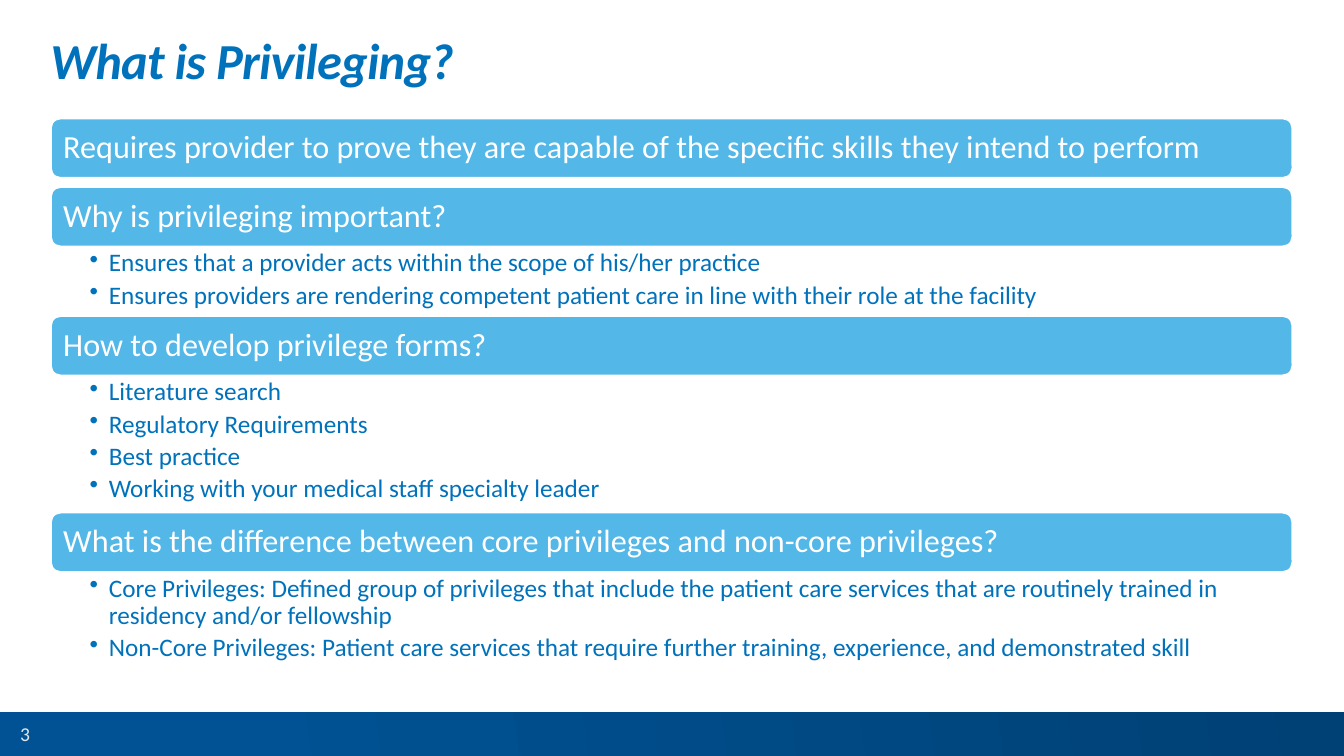
from lxml import etree
from pptx import Presentation, util as u
from pptx.dml.color import RGBColor
from pptx.enum import shapes, text
from pptx.oxml.ns import qn

COLORS = {
    "heading": "53B7E8",
    "blue": "0072BC",
    "footer start": "005294",
    "footer end": "004175",
    "white": "FFFFFF",
    "page number": "E6E7E8",
}

# Vertical measures are percentages of the slide height.
HEADING_HEIGHT = 8
STACK_TOP = 15.6
GAP = 1.07

# Heading, its bullets, and the height that the bullets take.
SECTIONS = [
    ("Requires provider to prove they are capable of the specific skills they intend to perform",
     [], GAP),
    ("Why is privileging important?",
     ["Ensures that a provider acts within the scope of his/her practice",
      "Ensures providers are rendering competent patient care in line with their role at the facility"],
     9.07),
    ("How to develop privilege forms?",
     ["Literature search",
      "Regulatory Requirements",
      "Best practice",
      "Working with your medical staff specialty leader"],
     18),
    ("What is the difference between core privileges and non-core privileges?",
     ["Core Privileges: Defined group of privileges that include the patient care services "
      "that are routinely trained in residency and/or fellowship",
      "Non-Core Privileges: Patient care services that require further training, experience, "
      "and demonstrated skill"],
     12.8),
]


class SlideBuilder:
    font = "Calibri"
    left, width = 3.75, 92.45

    def __init__(self, deck):
        self.deck = deck
        self.slide = deck.slides.add_slide(deck.slide_layouts[5])

    def box(self, left, top, width, height):
        """Turn percentages of the slide into lengths."""
        across, down = self.deck.slide_width / 100, self.deck.slide_height / 100
        return [round(v) for v in (left * across, top * down, width * across, height * down)]

    def color(self, name):
        return RGBColor.from_string(COLORS[name])

    def style(self, paragraph, size, color, **emphasis):
        font = paragraph.font
        font.name, font.size = self.font, u.Pt(size)
        font.color.rgb = self.color(color)
        for name, value in emphasis.items():
            setattr(font, name, value)

    def frame(self, shape, anchor, insets):
        """Prepare a text frame; insets are left, top, right, bottom in inches."""
        frame = shape.text_frame
        frame.word_wrap, frame.auto_size = True, text.MSO_AUTO_SIZE.NONE
        frame.vertical_anchor = anchor
        (frame.margin_left, frame.margin_top,
         frame.margin_right, frame.margin_bottom) = map(u.Inches, insets)
        return frame

    def title(self, words):
        title = self.slide.shapes.title
        title.left, title.top, title.width, title.height = self.box(self.left, 5.07, 92.5, 7.2)
        frame = self.frame(title, text.MSO_ANCHOR.TOP, (0, 0, 0, 0))
        frame.text = words
        line = frame.paragraphs[0]
        line.alignment, line.line_spacing = text.PP_ALIGN.LEFT, 0.85
        self.style(line, 36, "blue", bold=True, italic=True)
        line.runs[0].font._element.set("spc", "-50")

    def heading(self, words, top):
        bar = self.slide.shapes.add_shape(
            shapes.MSO_SHAPE.ROUNDED_RECTANGLE,
            *self.box(self.left, top, self.width, HEADING_HEIGHT))
        bar.shadow.inherit = False
        bar.fill.solid()
        bar.fill.fore_color.rgb = self.color("heading")
        bar.line.color.rgb = self.color("white")
        bar.line.width = u.Pt(2)
        frame = self.frame(bar, text.MSO_ANCHOR.MIDDLE, (0.1, 0.1, 0.1, 0.1))
        frame.text = words
        line = frame.paragraphs[0]
        line.alignment, line.line_spacing = text.PP_ALIGN.LEFT, 0.9
        self.style(line, 23, "white")

    def bullets(self, points, top, height):
        body = self.slide.shapes.add_textbox(*self.box(self.left, top, self.width, height))
        frame = self.frame(body, text.MSO_ANCHOR.TOP, (0.39, 0.03, 0.18, 0.03))
        frame.text = "\n".join(points)
        for point in frame.paragraphs:
            point.level, point.line_spacing, point.space_after = 1, 0.9, u.Pt(3.6)
            properties = point._p.get_or_add_pPr()
            properties.set("marL", str(u.Inches(0.19)))
            properties.set("indent", str(-u.Inches(0.19)))
            etree.SubElement(properties, qn("a:buChar"), char="•")
            self.style(point, 18, "blue")

    def footer(self, number):
        top, height = 94.2, 5.8
        band = self.slide.shapes.add_shape(
            shapes.MSO_SHAPE.RECTANGLE, *self.box(0, top, 100, height))
        band.shadow.inherit = False
        band.line.fill.background()
        band.fill.gradient()
        band.fill.gradient_angle = 8
        stops = zip(band.fill.gradient_stops, ("footer start", "footer end"), (0.18, 1))
        for stop, color, position in stops:
            stop.color.rgb, stop.position = self.color(color), position

        page = self.slide.shapes.add_textbox(*self.box(0, top, self.left, height))
        frame = self.frame(page, text.MSO_ANCHOR.MIDDLE, (0.1, 0.05, 0.1, 0.05))
        frame.text = number
        line = frame.paragraphs[0]
        line.alignment, line.space_after = text.PP_ALIGN.CENTER, u.Pt(6)
        self.style(line, 14, "page number")


def main():
    deck = Presentation()
    deck.slide_width, deck.slide_height = u.Inches(13.33), u.Inches(7.5)
    builder = SlideBuilder(deck)
    builder.footer("3")
    builder.title("What is Privileging?")
    top = STACK_TOP
    for heading, points, height in SECTIONS:
        builder.heading(heading, top)
        top += HEADING_HEIGHT
        if points:
            builder.bullets(points, top, height)
        top += height
    deck.save("out.pptx")


if __name__ == "__main__":
    main()
